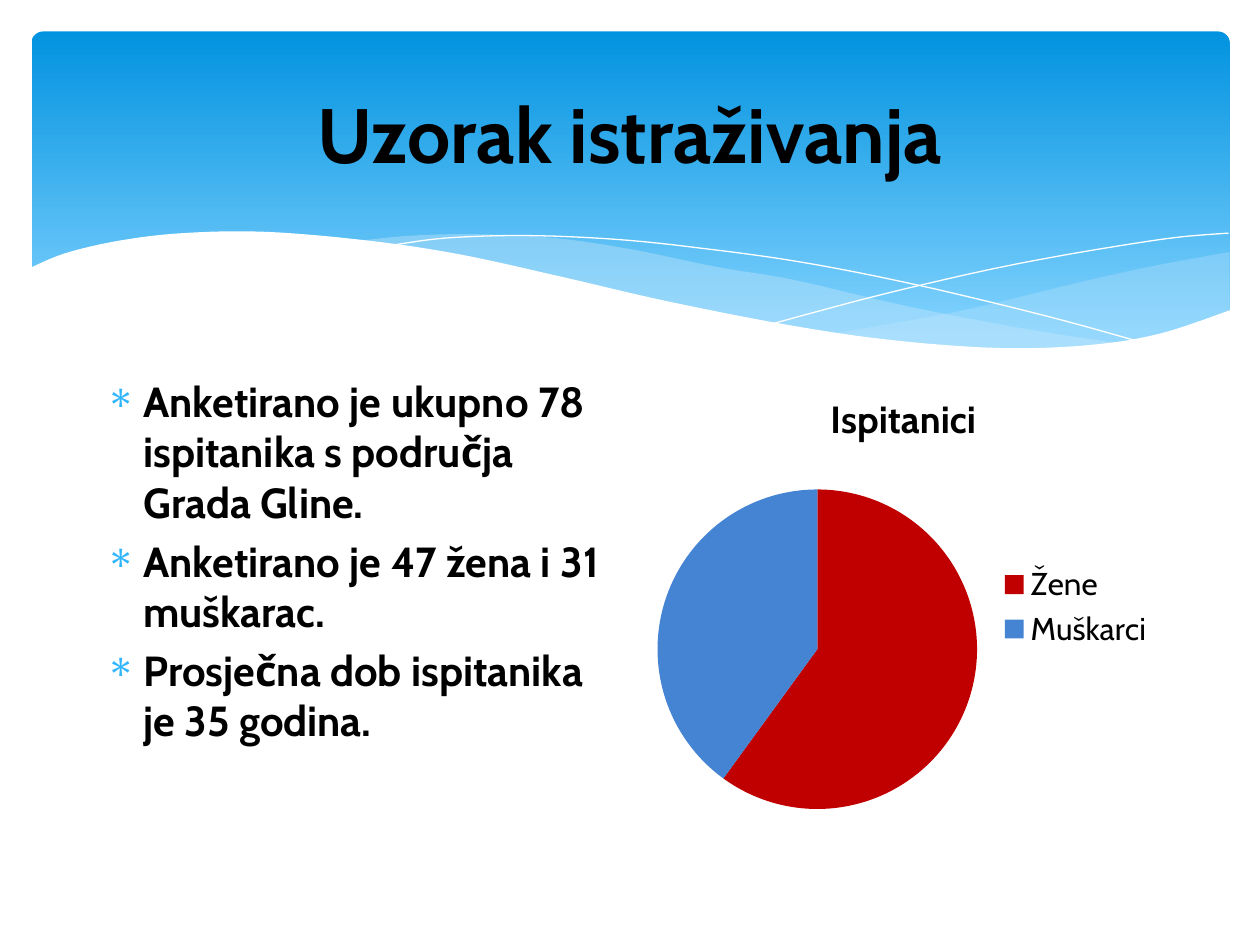
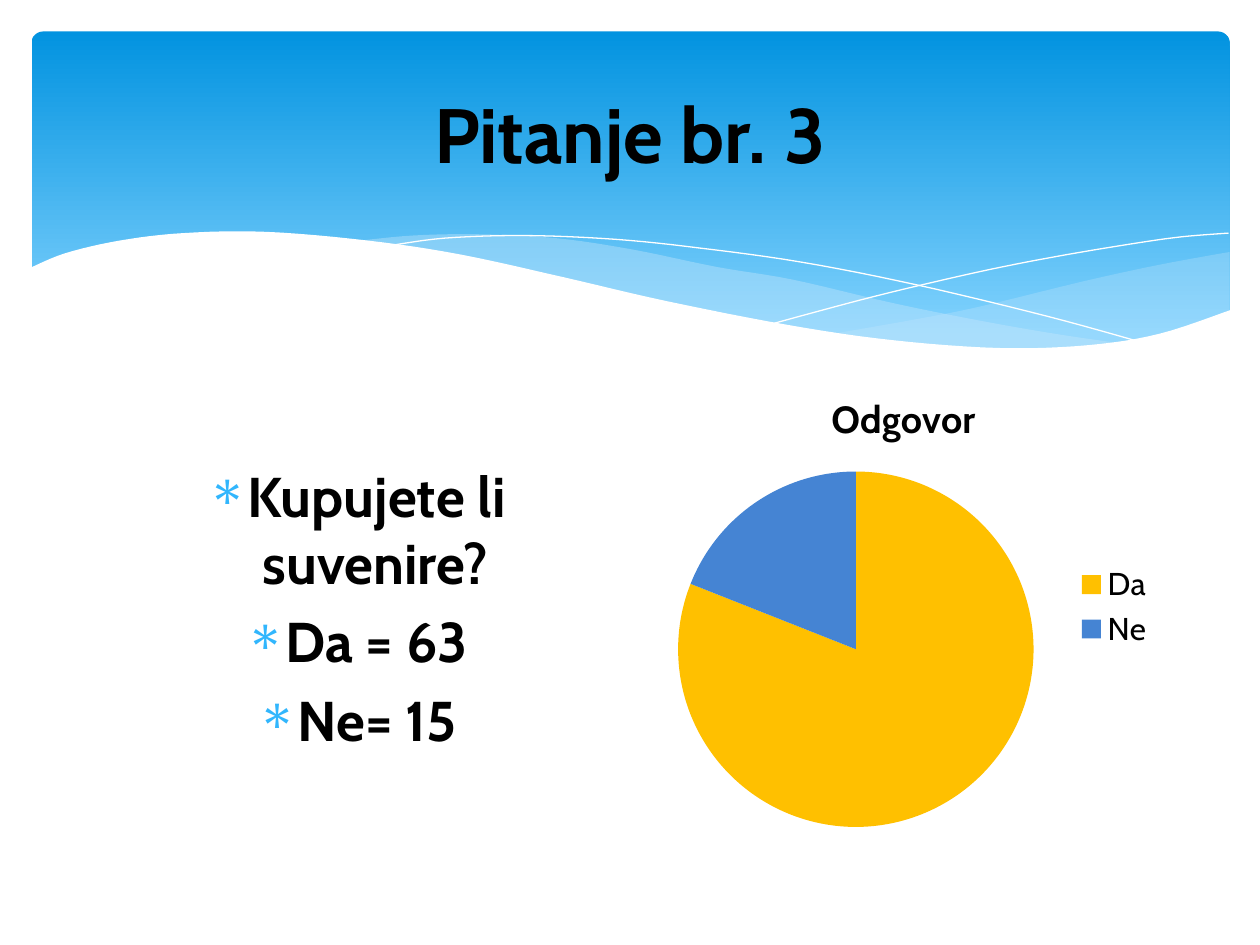
from dataclasses import dataclass

from lxml import etree
from pptx import Presentation
from pptx.chart.data import CategoryChartData
from pptx.dml.color import RGBColor
from pptx.enum.chart import XL_CHART_TYPE, XL_LEGEND_POSITION
from pptx.enum.shapes import MSO_SHAPE
from pptx.enum.text import MSO_ANCHOR, PP_ALIGN
from pptx.oxml.ns import qn
from pptx.util import Pt

Point = tuple[float, float]

PIE = XL_CHART_TYPE.PIE
RIGHT = XL_LEGEND_POSITION.RIGHT
ROUNDED = MSO_SHAPE.ROUNDED_RECTANGLE
TOP, MIDDLE = MSO_ANCHOR.TOP, MSO_ANCHOR.MIDDLE
LEFT, CENTER = PP_ALIGN.LEFT, PP_ALIGN.CENTER

FONT = "Cabin"
BLACK = RGBColor(0x00, 0x00, 0x00)
WHITE = RGBColor(0xFF, 0xFF, 0xFF)
BAND_TOP = RGBColor(0x02, 0x93, 0xE0)
BAND_BOTTOM = RGBColor(0x83, 0xD3, 0xFE)
MIST = RGBColor(0xC6, 0xE7, 0xFC)
BULLET = RGBColor(0x31, 0xB6, 0xFD)
RED = RGBColor(0xC0, 0x00, 0x00)
GOLD = RGBColor(0xFF, 0xC0, 0x00)
BLUE = RGBColor(0x45, 0x84, 0xD3)

BODY_TOP, BODY_W, BODY_H = 211, 301, 271.5
BODY_X, CHART_X = 53.3, 365.8
INDENT = 21.6
CURVE_STEPS = 6


@dataclass
class Wave:
    crest: list[Point]
    color: RGBColor
    base: float
    opacity: int = 100


@dataclass
class SurveySlide:
    title: str
    bullets: list[str]
    size: float
    align: PP_ALIGN
    anchor: MSO_ANCHOR
    chart_title: str
    answers: dict[str, float]
    colors: list[RGBColor]


MIST_WAVES = [
    Wave([(475.9, 190.8), (524.9, 182.2), (560.9, 175), (619.9, 160.6),
          (663.1, 151.2), (702.7, 144)], MIST, 200, 29),
    Wave([(205.9, 137.5), (236.2, 134.6), (273.6, 133.9), (317.5, 136.1),
          (361.4, 142.6), (409.7, 152.6), (452.9, 159.8), (508.3, 172.8),
          (558, 182.9), (603, 190.8), (643, 196.6)], MIST, 200.9, 40),
]
HAIRLINES = [
    [(222.5, 140.4), (254.2, 136.1), (299.5, 134.6), (352.1, 136.8),
     (400.3, 141.8), (457.9, 149.8), (523.4, 162.7), (598.3, 180.7),
     (653, 195.8)],
    [(441.4, 185), (500.4, 169.2), (558.7, 155.5), (601.9, 146.9),
     (644.4, 139.7), (674.6, 135.4), (702, 133.2)],
]
WHITE_WAVE = Wave(
    [(16.6, 153.4), (37.4, 144.7), (68.4, 137.5), (105.1, 133.2),
     (151.9, 132.5), (210.2, 137.5), (262.8, 145.4), (321.8, 158.4),
     (380.9, 172.1), (450.7, 185.8), (509.8, 194.4), (571, 198.9),
     (621.4, 197.3), (662.4, 190.8), (703.4, 177.1)], WHITE, 236.9)

SLIDES = [
    SurveySlide(
        "Uzorak istraživanja",
        ["Anketirano je ukupno 78 ispitanika s područja Grada Gline.",
         "Anketirano je 47 žena i 31 muškarac.",
         "Prosječna dob ispitanika je 35 godina."],
        24, LEFT, TOP, "Ispitanici", {"Žene": 60, "Muškarci": 40}, [RED, BLUE]),
    SurveySlide(
        "Pitanje br. 3",
        ["Kupujete li suvenire?", "Da = 63", "Ne= 15"],
        32, CENTER, MIDDLE, "Odgovor", {"Da": 81, "Ne": 19}, [GOLD, BLUE]),
]


def smooth(knots: list[Point]) -> list[Point]:
    padded = [knots[0], *knots, knots[-1]]
    curve = [knots[0]]
    for a, b, c, d in zip(padded, padded[1:], padded[2:], padded[3:]):
        for step in range(1, CURVE_STEPS + 1):
            t = step / CURVE_STEPS
            x, y = (
                q + t / 2 * (r - p + t * (2 * p - 5 * q + 4 * r - s
                                          + t * (3 * (q - r) + s - p)))
                for p, q, r, s in zip(a, b, c, d))
            curve.append((x, y))
    return curve


def add_outline(s, points: list[Point], close: bool):
    start, *rest = [(Pt(x), Pt(y)) for x, y in points]
    builder = s.shapes.build_freeform(*start)
    builder.add_line_segments(rest, close=close)
    sp = builder.convert_to_shape()
    sp.shadow.inherit = False
    return sp


def add_wave(s, wave: Wave) -> None:
    left, right = wave.crest[0][0], wave.crest[-1][0]
    corners = [(right, wave.base), (left, wave.base)]
    sp = add_outline(s, smooth(wave.crest) + corners, True)
    sp.fill.solid()
    sp.fill.fore_color.rgb = wave.color
    sp.line.fill.background()
    if wave.opacity < 100:
        color = sp.fill._xPr.find(qn("a:solidFill"))[0]
        etree.SubElement(color, qn("a:alpha"), val=str(wave.opacity * 1000))


def add_hairline(s, knots: list[Point]) -> None:
    sp = add_outline(s, smooth(knots), False)
    sp.fill.background()
    sp.line.color.rgb = WHITE
    sp.line.width = Pt(0)


def add_band(s) -> None:
    sp = s.shapes.add_shape(ROUNDED, Pt(18), Pt(18), Pt(684.7), Pt(194.4))
    sp.adjustments[0] = 0.034
    sp.shadow.inherit = False
    sp.line.fill.background()
    sp.fill.gradient()
    sp.fill.gradient_angle = 270
    stops = zip(sp.fill.gradient_stops, [0, 0.9], [BAND_TOP, BAND_BOTTOM])
    for stop, position, color in stops:
        stop.position = position
        stop.color.rgb = color
    for wave in MIST_WAVES:
        add_wave(s, wave)
    for knots in HAIRLINES:
        add_hairline(s, knots)
    add_wave(s, WHITE_WAVE)


def style_font(font, size: float, bold: bool) -> None:
    font.name = FONT
    font.size = Pt(size)
    font.bold = bold
    font.color.rgb = BLACK


def set_title(s, text: str) -> None:
    sp = s.shapes.title
    s.shapes._spTree.append(sp._element)
    sp.left, sp.top, sp.width, sp.height = Pt(36), Pt(26.6), Pt(648), Pt(98.6)
    tf = sp.text_frame
    tf.text = text
    tf.vertical_anchor = MIDDLE
    p = tf.paragraphs[0]
    p.alignment = CENTER
    style_font(p.runs[0].font, 44, True)


def set_bullet(p) -> None:
    pPr = p._p.get_or_add_pPr()
    pPr.set("marL", str(Pt(INDENT)))
    pPr.set("indent", str(-Pt(INDENT)))
    color = etree.SubElement(pPr, qn("a:buClr"))
    etree.SubElement(color, qn("a:srgbClr"), val=str(BULLET))
    etree.SubElement(pPr, qn("a:buChar"), char="∗")


def add_bullets(s, survey: SurveySlide) -> None:
    sp = s.shapes.add_textbox(Pt(BODY_X), Pt(BODY_TOP), Pt(BODY_W), Pt(BODY_H))
    tf = sp.text_frame
    tf.word_wrap = True
    tf.vertical_anchor = survey.anchor
    tf.text = "\n".join(survey.bullets)
    for p in tf.paragraphs:
        p.alignment = survey.align
        p.space_before = Pt(survey.size * 0.2)
        set_bullet(p)
        style_font(p.runs[0].font, survey.size, True)


def add_pie(s, survey: SurveySlide) -> None:
    data = CategoryChartData()
    data.categories = list(survey.answers)
    data.add_series(survey.chart_title, list(survey.answers.values()))
    chart = s.shapes.add_chart(PIE, Pt(CHART_X), Pt(BODY_TOP), Pt(BODY_W),
                               Pt(BODY_H), data).chart
    style_font(chart.font, 18, False)
    chart.has_title = True
    tf = chart.chart_title.text_frame
    tf.text = survey.chart_title
    style_font(tf.paragraphs[0].runs[0].font, 21.6, True)
    chart.chart_title.include_in_layout = False
    chart.has_legend = True
    chart.legend.position = RIGHT
    chart.legend.include_in_layout = False
    plot = chart.plots[0]
    plot.vary_by_categories = True
    for i, color in enumerate(survey.colors):
        fill = plot.series[0].points[i].format.fill
        fill.solid()
        fill.fore_color.rgb = color


def main() -> None:
    prs = Presentation()
    prs.slide_width, prs.slide_height = Pt(720), Pt(540)
    for survey in SLIDES:
        s = prs.slides.add_slide(prs.slide_layouts[5])
        add_band(s)
        set_title(s, survey.title)
        add_bullets(s, survey)
        add_pie(s, survey)
    prs.save("out.pptx")


if __name__ == "__main__":
    main()
